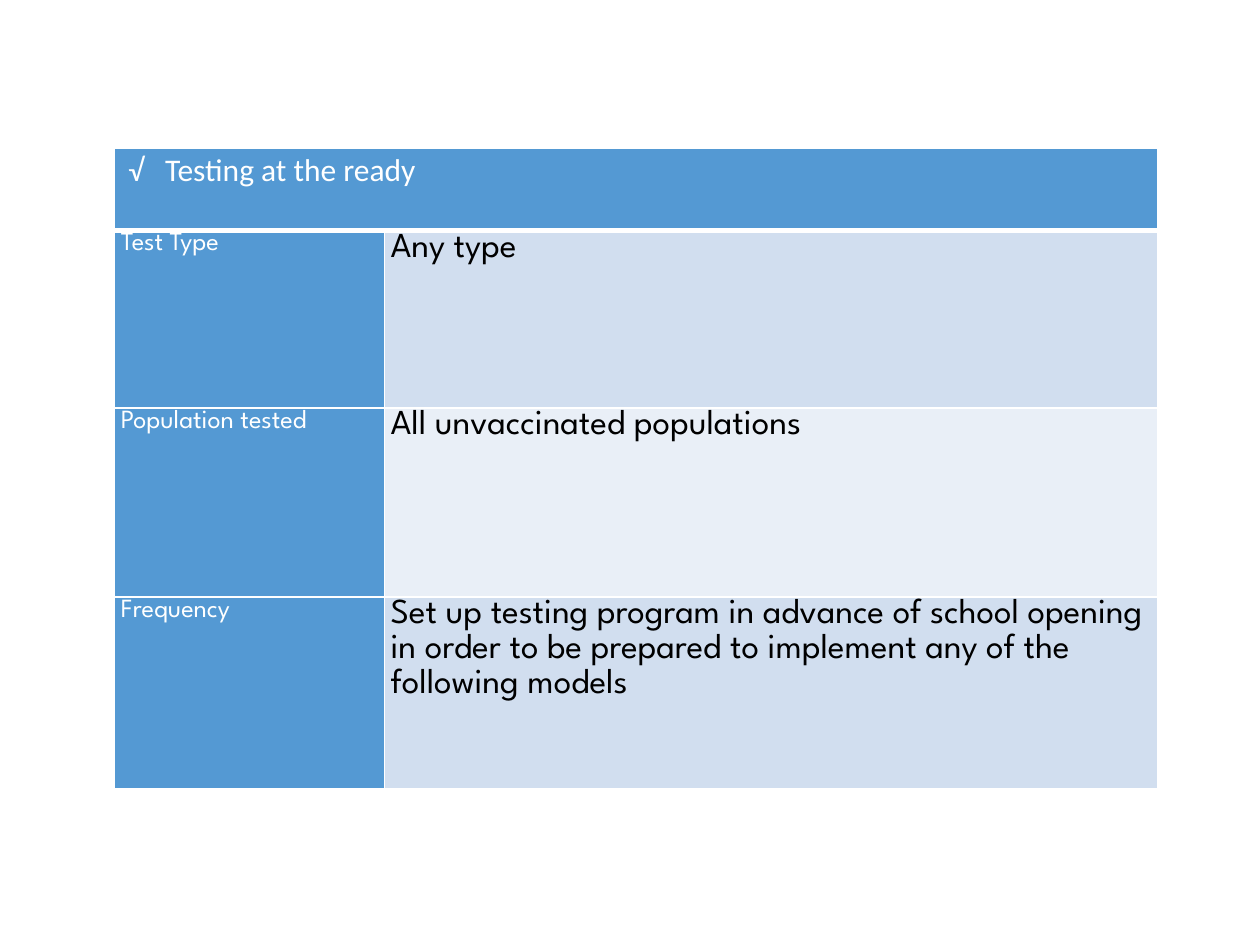
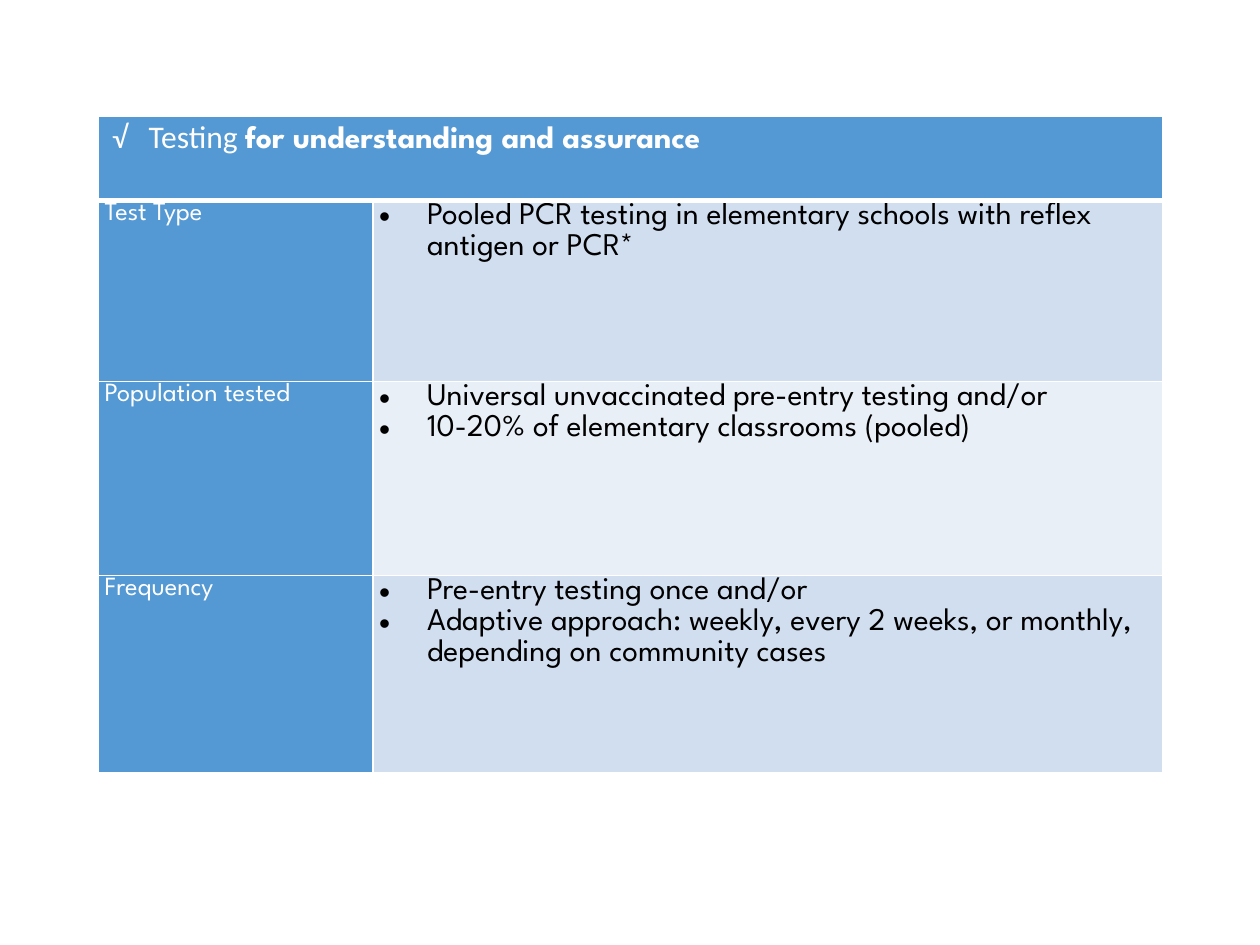
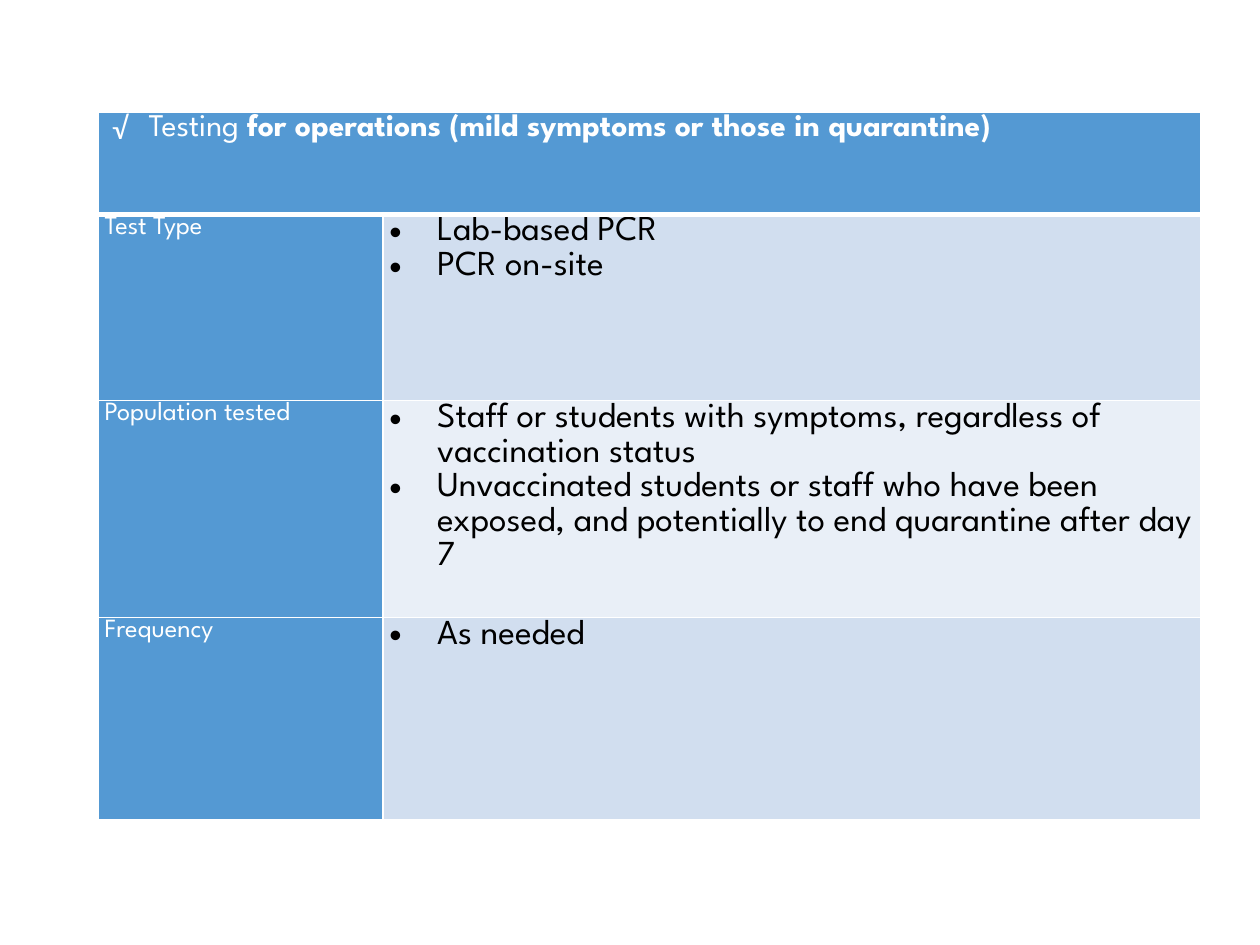
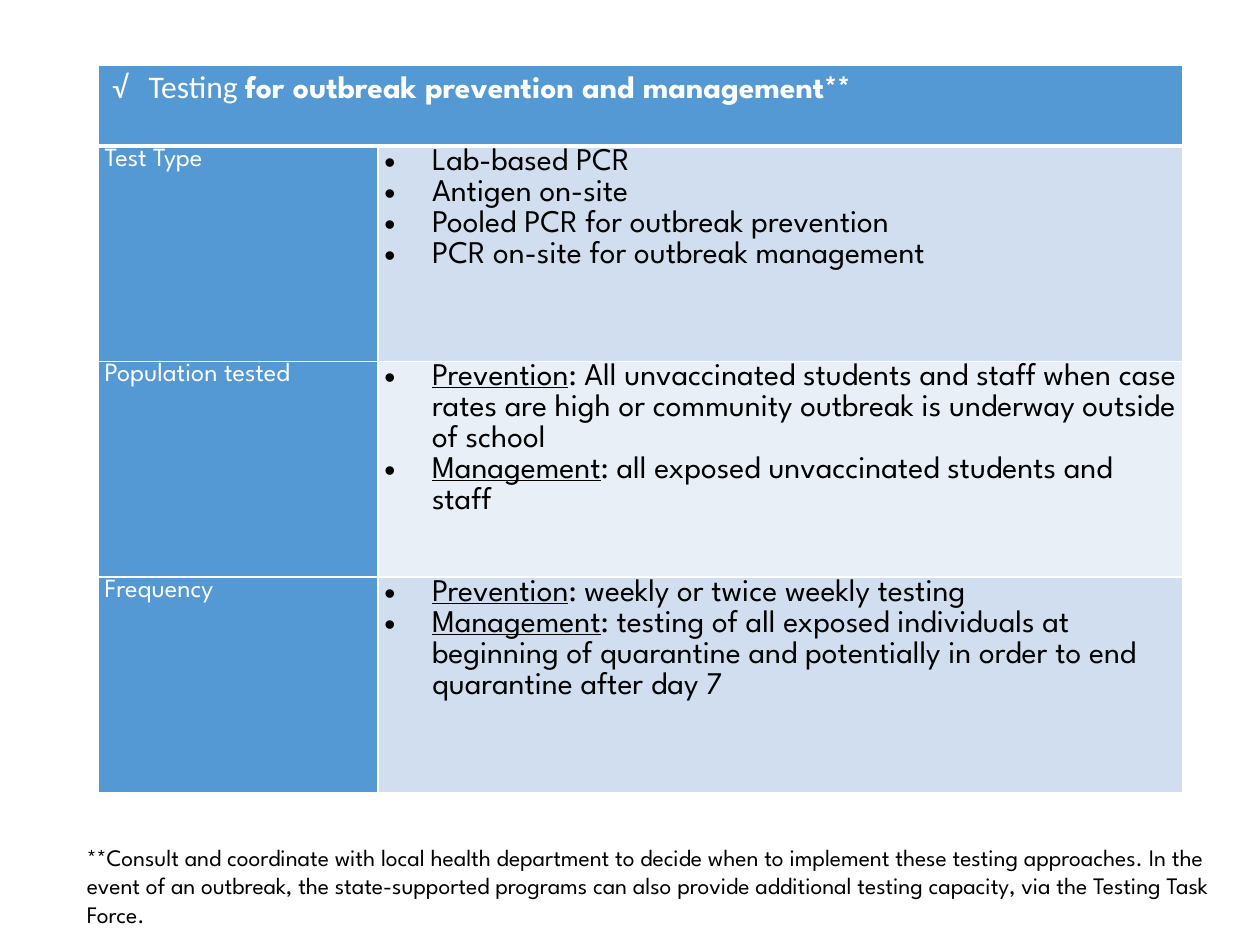
from collections import namedtuple

from lxml.etree import SubElement
from pptx import Presentation
from pptx.dml.color import RGBColor
from pptx.oxml.ns import qn
from pptx.util import Inches, Pt

WHITE = RGBColor(0xFF, 0xFF, 0xFF)
BLACK = RGBColor(0x00, 0x00, 0x00)
BLUE = RGBColor(0x54, 0x99, 0xD3)
PALE_BLUE = RGBColor(0xD1, 0xDE, 0xEF)
PALEST_BLUE = RGBColor(0xE9, 0xEF, 0xF7)
BODY_FONT = "League Spartan"
TITLE_FONT = "Calibri"
ROW_LABELS = ("Test Type", "Population tested", "Frequency")

Box = namedtuple("Box", "left top width height")
Span = namedtuple("Span", "text font bold underline", defaults=(BODY_FONT, False, False))
Plan = namedtuple("Plan", "box label_width heights title size bulleted answers")


def lead(word, rest):
    """Return an underlined lead word followed by plain text."""
    return [Span(word, underline=True), Span(rest)]


PLANS = (
    Plan(
        Box(0.91, 1.18, 8.28, 5.08), 2.14, (0.65, 1.41, 1.5, 1.52),
        [Span("Testing at the ready", TITLE_FONT)], 20, False,
        (
            [[Span("Any type")]],
            [[Span("All unvaccinated populations")]],
            [[Span("Set up testing program in advance of school opening in order "
                   "to be prepared to implement any of the following models")]],
        ),
    ),
    Plan(
        Box(0.78, 0.92, 8.45, 5.2), 2.18, (0.67, 1.44, 1.54, 1.56),
        [Span("Testing ", TITLE_FONT), Span("for understanding and assurance", bold=True)],
        18, True,
        (
            [[Span("Pooled PCR testing in elementary schools with reflex antigen or PCR*")]],
            [[Span("Universal unvaccinated pre-entry testing and/or")],
             [Span("10-20% of elementary classrooms (pooled)")]],
            [[Span("Pre-entry testing once and/or")],
             [Span("Adaptive approach: weekly, every 2 weeks, or monthly, "
                   "depending on community cases")]],
        ),
    ),
    Plan(
        Box(0.78, 0.89, 8.75, 5.62), 2.26, (0.81, 1.48, 1.72, 1.61),
        [Span("Testing "),
         Span("for operations (mild symptoms or those in quarantine)", bold=True)],
        20, True,
        (
            [[Span("Lab-based PCR")], [Span("PCR on-site")]],
            [[Span("Staff or students with symptoms, regardless of vaccination status")],
             [Span("Unvaccinated students or staff who have been exposed, "
                   "and potentially to end quarantine after day 7")]],
            [[Span("As needed")]],
        ),
    ),
    Plan(
        Box(0.78, 0.52, 8.61, 5.77), 2.22, (0.64, 1.71, 1.71, 1.71),
        [Span("Testing ", TITLE_FONT),
         Span("for outbreak prevention and management**", bold=True)],
        18, True,
        (
            [[Span("Lab-based PCR")], [Span("Antigen on-site")],
             [Span("Pooled PCR for outbreak prevention")],
             [Span("PCR on-site for outbreak management")]],
            [lead("Prevention", ": All unvaccinated students and staff when case rates are "
                                "high or community outbreak is underway outside of school"),
             lead("Management", ": all exposed unvaccinated students and staff")],
            [lead("Prevention", ": weekly or twice weekly testing"),
             lead("Management", ": testing of all exposed individuals at beginning of "
                                "quarantine and potentially in order to end quarantine "
                                "after day 7")],
        ),
    ),
)
FOOTNOTE = (
    "**Consult and coordinate with local health department to decide when to implement "
    "these testing approaches. In the event of an outbreak, the state-supported programs "
    "can also provide additional testing capacity, via the Testing Task Force."
)


def set_bullet(para, mark, font, left, hanging):
    """Give a paragraph a hanging bullet mark."""
    properties = para._p.get_or_add_pPr()
    properties.set("marL", str(Inches(left)))
    properties.set("indent", str(-Inches(hanging)))
    SubElement(properties, qn("a:buFont"), typeface=font)
    SubElement(properties, qn("a:buChar"), char=mark)


def write_para(para, spans, size, color, bullet=None, line_spacing=None):
    """Write styled spans into one paragraph."""
    if line_spacing:
        para.line_spacing = line_spacing
    if bullet:
        set_bullet(para, *bullet)
    para.font.size = Pt(size)
    para.font.color.rgb = color
    para.font.name = BODY_FONT
    para.font.bold = False
    for part in spans:
        span = para.add_run()
        span.text = part.text
        if part.font != BODY_FONT:
            span.font.name = part.font
        if part.bold:
            span.font.bold = True
        if part.underline:
            span.font.underline = True


def set_borders(cell, bottom=1):
    """Draw white lines around a cell."""
    properties = cell._tc.get_or_add_tcPr()
    for side, width in (("L", 1), ("R", 1), ("T", 1), ("B", bottom)):
        line = SubElement(properties, qn(f"a:ln{side}"), w=str(Pt(width)))
        fill = SubElement(line, qn("a:solidFill"))
        SubElement(fill, qn("a:srgbClr"), val=str(WHITE))


def fill_cell(cell, paras, size, color, fill, bullet=None, bottom=1):
    """Style a table cell and write its paragraphs."""
    set_borders(cell, bottom)
    cell.fill.solid()
    cell.fill.fore_color.rgb = fill
    cell.margin_left = cell.margin_right = Inches(0.05)
    cell.margin_top = cell.margin_bottom = 0
    frame = cell.text_frame
    for index, spans in enumerate(paras):
        para = frame.add_paragraph() if index else frame.paragraphs[0]
        write_para(para, spans, size, color, bullet, 1.07)


def add_plan_table(page, plan):
    """Add the table of one testing plan."""
    box = plan.box
    table = page.shapes.add_table(len(plan.heights), 2, *map(Inches, box)).table
    table.first_row = table.horz_banding = False
    for column, width in zip(table.columns, (plan.label_width, box.width - plan.label_width)):
        column.width = Inches(width)
    for row, height in zip(table.rows, plan.heights):
        row.height = Inches(height)

    title = table.cell(0, 0)
    title.merge(table.cell(0, 1))
    fill_cell(title, [plan.title], 18, WHITE, BLUE, ("√", TITLE_FONT, 0.35, 0.29), bottom=3)
    bullet = ("•", "Arial", 0.38, 0.38) if plan.bulleted else None
    for row, (label, answer) in enumerate(zip(ROW_LABELS, plan.answers), 1):
        fill_cell(table.cell(row, 0), [[Span(label)]], 15, WHITE, BLUE)
        shade = PALE_BLUE if row % 2 else PALEST_BLUE
        fill_cell(table.cell(row, 1), answer, plan.size, BLACK, shade, bullet)


def add_footnote(page, box, text):
    """Add a wrapped note below the table."""
    frame = page.shapes.add_textbox(*map(Inches, box)).text_frame
    frame.word_wrap = True
    write_para(frame.paragraphs[0], [Span(text)], 13.5, BLACK)


def main():
    """Build and save the deck."""
    deck = Presentation()
    deck.slide_width, deck.slide_height = Inches(10), Inches(7.5)
    for plan in PLANS:
        page = deck.slides.add_slide(deck.slide_layouts[6])
        add_plan_table(page, plan)
    add_footnote(page, Box(0.59, 6.64, 9.18, 0.78), FOOTNOTE)
    deck.save("out.pptx")


if __name__ == "__main__":
    main()
